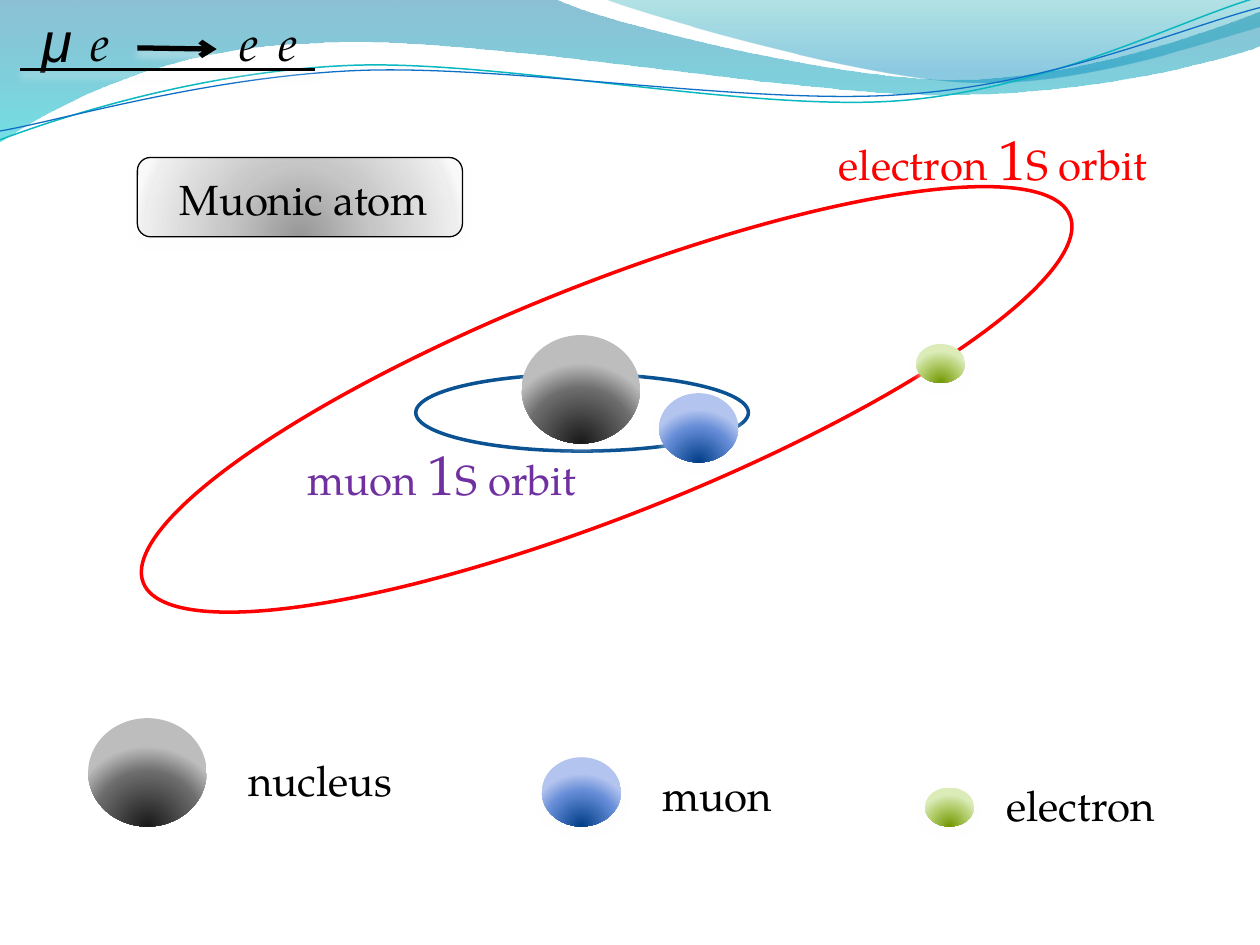
from math import cos, radians, sin
from typing import NamedTuple, Optional

from lxml.etree import SubElement
from pptx import Presentation
from pptx.dml.color import RGBColor
from pptx.enum.shapes import MSO_CONNECTOR, MSO_SHAPE
from pptx.enum.text import MSO_AUTO_SIZE
from pptx.oxml import parse_xml
from pptx.oxml.ns import nsdecls, qn
from pptx.util import Inches, Pt

SERIF, SANS = "TeX Gyre Pagella", "Arial"
BLACK = RGBColor(0x00, 0x00, 0x00)
WHITE = RGBColor(0xFF, 0xFF, 0xFF)
RED = RGBColor(0xFF, 0x00, 0x00)
PURPLE = RGBColor(0x70, 0x30, 0xA0)
NAVY = RGBColor(0x0B, 0x52, 0x92)
TEAL = RGBColor(0x0A, 0xB8, 0xBF)
BLUE = RGBColor(0x0F, 0x6F, 0xC6)

LINEAR = '<a:lin ang="5400000" scaled="1"/>'
RADIAL = ('<a:path path="circle">'
          '<a:fillToRect l="50000" t="130000" r="50000" b="-30000"/></a:path>')


class Stop(NamedTuple):
    pos: int
    color: RGBColor
    alpha: int = 100


class Particle(NamedTuple):
    width: float
    height: float
    stops: list[Stop]


class Run(NamedTuple):
    text: str
    size: int = 24
    font: str = SERIF
    italic: bool = False


class Box(NamedTuple):
    x: float
    y: float
    w: float
    h: float
    rotation: float = 0


def ramp(*colors: str) -> list[Stop]:
    return [Stop(pos, RGBColor.from_string(c)) for pos, c in zip((0, 68, 100), colors)]


NUCLEUS = Particle(0.94, 0.86, ramp("191919", "6C6C6C", "BDBDBD"))
MUON = Particle(0.63, 0.55, ramp("003D87", "668DD7", "B3C4EF"))
ELECTRON = Particle(0.39, 0.31, ramp("729800", "B8D275", "DBECB9"))
BADGE = [Stop(0, RGBColor(0x97, 0x97, 0x97)), Stop(43, RGBColor(0xC6, 0xC6, 0xC6)),
         Stop(93, RGBColor(0xEE, 0xEE, 0xEE)), Stop(100, RGBColor(0xF9, 0xF9, 0xF9))]
WAVE = [Stop(0, RGBColor(0x00, 0x74, 0xA1), 45), Stop(100, RGBColor(0x00, 0xC6, 0xCF), 55)]
CREST = [Stop(0, RGBColor(0x00, 0xA1, 0xA9), 30), Stop(80, RGBColor(0x00, 0x8B, 0xBF), 45)]


def set_gradient(sp, stops: list[Stop], direction: str) -> None:
    gs = "".join(f'<a:gs pos="{s.pos * 1000}"><a:srgbClr val="{s.color}">'
                 f'<a:alpha val="{s.alpha * 1000}"/></a:srgbClr></a:gs>' for s in stops)
    sp.fill.solid()
    solid = sp._element.spPr.find(qn("a:solidFill"))
    solid.getparent().replace(solid, parse_xml(
        f'<a:gradFill {nsdecls("a")} rotWithShape="1"><a:gsLst>{gs}</a:gsLst>{direction}</a:gradFill>'))


def set_halo(sp, halo: bool) -> None:
    """Replace the theme shadow by a pale halo or nothing; called after fill and line."""
    effects = SubElement(sp._element.spPr, qn("a:effectLst"))
    if halo:
        effects.append(parse_xml(
            f'<a:outerShdw {nsdecls("a")} blurRad="{Pt(4.5)}" dist="{Pt(3)}" dir="5400000" '
            f'rotWithShape="0"><a:srgbClr val="{WHITE}"><a:alpha val="48000"/></a:srgbClr></a:outerShdw>'))


def style(sp, stops: Optional[list[Stop]] = None, direction: str = RADIAL,
          line: Optional[RGBColor] = None, width: float = 1, halo: bool = False) -> None:
    if stops:
        set_gradient(sp, stops, direction)
    else:
        sp.fill.background()
    if line is None:
        sp.line.fill.background()
    else:
        sp.line.color.rgb = line
        sp.line.width = Pt(width)
    set_halo(sp, halo)


def add_shape(shapes, kind, box: Box, **look) -> None:
    sp = shapes.add_shape(kind, *map(Inches, box[:4]))
    sp.rotation = box.rotation
    style(sp, **look)


def add_particle(shapes, particle: Particle, x: float, y: float) -> None:
    add_shape(shapes, MSO_SHAPE.OVAL, Box(x, y, particle.width, particle.height),
              stops=particle.stops, halo=True)


def add_curve(shapes, box: Box, start: tuple, segments: list[tuple], closed: bool, **look) -> None:
    """Segments hold two numbers for a straight line, six for a cubic Bezier."""
    x, y, w, h = map(Inches, box[:4])
    builder = shapes.build_freeform(x, y)
    builder.add_line_segments([(x + w, y), (x + w, y + h), (x, y + h)], close=closed)
    sp = builder.convert_to_shape()
    sp.rotation = box.rotation
    outline = sp._element.spPr.find(".//" + qn("a:path"))
    for child in list(outline):
        outline.remove(child)

    # Points are given as they lie on the slide, so turn them back into the box
    cx, cy, angle = box.x + box.w / 2, box.y + box.h / 2, radians(-box.rotation)

    def add_step(tag: str, numbers: tuple) -> None:
        step = SubElement(outline, qn(tag))
        for px, py in zip(numbers[::2], numbers[1::2]):
            dx, dy = px - cx, py - cy
            local_x = dx * cos(angle) - dy * sin(angle) + box.w / 2
            local_y = dx * sin(angle) + dy * cos(angle) + box.h / 2
            SubElement(step, qn("a:pt"), x=str(Inches(local_x)), y=str(Inches(local_y)))

    add_step("a:moveTo", start)
    for seg in segments:
        add_step("a:lnTo" if len(seg) == 2 else "a:cubicBezTo", seg)
    if closed:
        SubElement(outline, qn("a:close"))
    style(sp, **look)


def add_text(shapes, box: Box, runs: list[Run], color: RGBColor = BLACK) -> None:
    tf = shapes.add_textbox(*map(Inches, box[:4])).text_frame
    tf.word_wrap = True
    tf.auto_size = MSO_AUTO_SIZE.SHAPE_TO_FIT_TEXT
    p = tf.paragraphs[0]
    for run in runs:
        r = p.add_run()
        r.text = run.text
        r.font.size, r.font.name, r.font.italic = Pt(run.size), run.font, run.italic
        r.font.color.rgb = color


def add_line(shapes, x1: float, y1: float, x2: float, y2: float,
             width: float, arrow: bool = False) -> None:
    cn = shapes.add_connector(MSO_CONNECTOR.STRAIGHT, *map(Inches, (x1, y1, x2, y2)))
    cn.line.color.rgb = BLACK
    cn.line.width = Pt(width)
    if arrow:
        SubElement(cn._element.spPr.find(qn("a:ln")), qn("a:tailEnd"), type="arrow")
    set_halo(cn, True)


def main() -> None:
    prs = Presentation()
    prs.slide_width, prs.slide_height = Inches(10), Inches(7.5)
    shapes = prs.slides.add_slide(prs.slide_layouts[6]).shapes

    # Wave decoration along the top
    add_curve(shapes, Box(-0.01, -0.01, 10.02, 1.14), (0, 0), [
        (4.4, -0.01), (4.76, 0.17, 6.64, 0.63, 7.58, 0.63), (8.53, 0.63, 9.58, 0.26, 10, 0.09),
        (10.01, 0.36), (9.83, 0.44, 8.7, 0.76, 7.46, 0.75), (6.22, 0.75, 3.82, 0.28, 2.57, 0.34),
        (1.29, 0.36, 0.46, 0.83, -0.01, 1.13), (0, 0)], True, stops=WAVE, direction=LINEAR)
    add_curve(shapes, Box(4.79, -0.01, 5.21, 0.7), (4.79, -0.01), [
        (5.09, 0.11, 6.82, 0.62, 7.69, 0.65), (8.56, 0.69, 9.61, 0.32, 10, 0.21),
        (10, 0), (4.79, -0.01)], True, stops=CREST, direction=LINEAR)
    add_curve(shapes, Box(-0.02, 0.22, 10.02, 0.71, 357.3), (0, 1.11), [
        (0.48, 0.93, 1.58, 0.57, 2.77, 0.52), (3.95, 0.47, 5.93, 0.89, 7.13, 0.8),
        (8.33, 0.71, 9.38, 0.15, 9.98, -0.02)], False, line=TEAL, width=0.85)
    add_curve(shapes, Box(-0.02, 0.3, 10.03, 0.58, 357.3), (0, 1.04), [
        (0.47, 0.96, 1.64, 0.61, 2.83, 0.56), (4.03, 0.51, 5.97, 0.84, 7.17, 0.75),
        (8.36, 0.67, 9.41, 0.21, 10, 0.06)], False, line=BLUE, width=0.75)

    # Reaction formula
    add_text(shapes, Box(0.23, 0, 0.7, 0.64), [Run("μ", 32, SANS, True)])
    for x in (0.62, 1.8, 2.11):
        add_text(shapes, Box(x, 0.05, 0.86, 0.57), [Run("e", 28, italic=True)])
    add_line(shapes, 1.09, 0.38, 1.72, 0.39, 3, arrow=True)
    add_line(shapes, 0.16, 0.55, 2.5, 0.55, 2)

    # Atom: orbits and particles
    add_shape(shapes, MSO_SHAPE.OVAL, Box(3.3, 2.97, 2.64, 0.61), line=NAVY, width=2)
    add_particle(shapes, MUON, 5.23, 3.12)
    add_shape(shapes, MSO_SHAPE.OVAL, Box(0.86, 2.25, 7.91, 1.84, 338.4), line=RED, width=2)
    add_particle(shapes, NUCLEUS, 4.14, 2.66)
    add_particle(shapes, ELECTRON, 7.27, 2.73)

    # Legend, with the particles standing on one baseline
    base = 6.56
    for particle, x, name, text_x, text_y in (
            (NUCLEUS, 0.7, "nucleus", 1.87, 5.94),
            (MUON, 4.3, "muon", 5.16, 6.06),
            (ELECTRON, 7.34, "electron", 7.89, 6.14)):
        add_particle(shapes, particle, x, base - particle.height)
        add_text(shapes, Box(text_x, text_y, 1.72, 0.5), [Run(name)])

    # Badge and orbit labels
    add_shape(shapes, MSO_SHAPE.ROUNDED_RECTANGLE, Box(1.09, 1.25, 2.58, 0.63),
              stops=BADGE, line=BLACK, width=0.75, halo=True)
    add_text(shapes, Box(1.33, 1.33, 2.42, 0.5), [Run("Muonic atom")])
    for name, box, color in (("electron ", Box(6.56, 0.94, 2.97, 0.64), RED),
                             ("muon ", Box(2.34, 3.44, 2.42, 0.64), PURPLE)):
        add_text(shapes, box, [Run(name), Run("1", 32), Run("S orbit")], color)

    prs.save("out.pptx")


if __name__ == "__main__":
    main()
